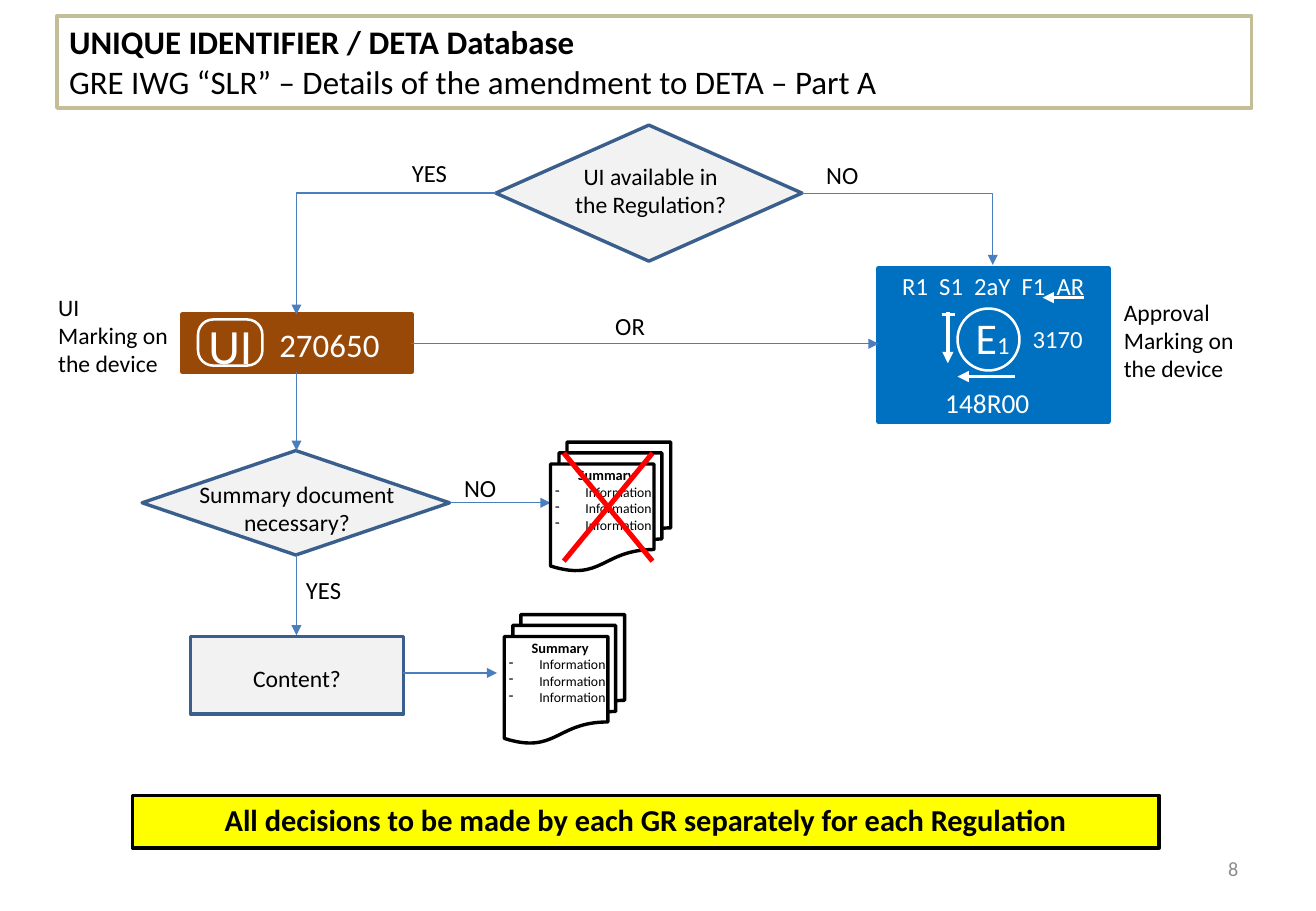
"""Builds the flow chart slide on unique identifiers in the DETA database."""
from pptx import Presentation
from pptx import util as u
from pptx.dml.color import RGBColor
from pptx.enum import shapes, text
from pptx.oxml.ns import qn
from lxml import etree

SCALE = 9144
FONT = "Calibri"
BLACK, WHITE, RED = "000000", "FFFFFF", "FF0000"
BLUE, BROWN, GREY, NAVY, ARROW = "0070C0", "984807", "F2F2F2", "3A5F8C", "4B7EBC"
MS, CT = shapes.MSO_SHAPE, shapes.MSO_CONNECTOR
LEFT, CENTER, RIGHT = text.PP_ALIGN.LEFT, text.PP_ALIGN.CENTER, text.PP_ALIGN.RIGHT

TITLE = ((47, 13, 983, 76), "UNIQUE IDENTIFIER / DETA Database",
         "GRE IWG “SLR” – Details of the amendment to DETA – Part A")
BANNER = ((109, 655, 845, 43),
          "All decisions to be made by each GR separately for each Regulation")
NODES = [
    (MS.FLOWCHART_DECISION, (117, 371, 253, 86)),
    (MS.FLOWCHART_DECISION, (408, 103, 252, 112)),
    (MS.RECTANGLE, (157, 524, 175, 64)),
]
LABELS = [
    ("YES", (329, 125, 59, 35), 14.6, LEFT),
    ("NO", (670, 127, 59, 35), 14.6, LEFT),
    ("YES", (242, 468, 57, 35), 14.6, LEFT),
    ("NO", (372, 384, 59, 35), 14.6, LEFT),
    ("OR", (489, 251, 59, 35), 14.6, CENTER),
    ("UI\vMarking on the device", (38, 236, 111, 81), 14, LEFT),
    ("Approval Marking on the device", (915, 240, 122, 81), 14, LEFT),
    ("UI available in the Regulation?", (461, 128, 149, 57), 14, CENTER),
    ("Summary document necessary?", (141, 390, 207, 57), 14, CENTER),
    ("Content?", (141, 542, 207, 34), 14, CENTER),
]
ELBOWS = [(660, 159, 817, 218), (408, 159, 244, 259)]
FLOWS = [(244, 457, 244, 523), (370, 414, 453, 414), (338, 283, 723, 283),
         (332, 554, 409, 554), (244, 306, 244, 371)]
APPROVAL_TEXTS = [
    ([("R1  S1  2aY  F1  AR", 14.6)], (723, 218, 189, 35), CENTER, {}),
    ([("E", 26), ("1", 14.6)], (793, 251, 51, 54), LEFT, {}),
    ([("148R00", 16.2)], (767, 306, 91, 41), CENTER, {"line_spacing": u.Pt(24.4)}),
    ([("3170", 14.6)], (840, 262, 62, 35), LEFT, {}),
]
APPROVAL_ARROWS = [(780, 257, 780, 299), (892, 245, 858, 245), (835, 310, 788, 310)]
APPROVAL_BAR = (775, 259, 786, 259)
UI_TEXTS = [("UI", 29.2, (157, 255, 65, 59), CENTER),
            ("270650", 19.5, (220, 262, 118, 43), LEFT)]
DOCUMENTS = [(415, 506), (453, 364)]
DOCUMENT_ITEMS = ["Information"] * 3
CROSS = [(464, 462, 537, 373), (464, 373, 537, 462)]


def px(values):
    return [u.Emu(v * SCALE) for v in values]


def rgb(value):
    return RGBColor.from_string(value)


def style(obj, **values):
    for name, value in values.items():
        setattr(obj, name, value)


def shape(parent, kind, box, fill, line, width):
    sp = parent.shapes.add_shape(kind, *px(box))
    sp.shadow.inherit = False
    if fill:
        sp.fill.solid()
        sp.fill.fore_color.rgb = rgb(fill)
    else:
        sp.fill.background()
    sp.line.color.rgb = rgb(line)
    sp.line.width = u.Pt(width)
    return sp


def connect(parent, ends, color, width, arrow=True, elbow=False):
    cn = parent.shapes.add_connector(CT.ELBOW if elbow else CT.STRAIGHT, *px(ends))
    cn.line.color.rgb = rgb(color)
    cn.line.width = u.Pt(width)
    pr = cn._element.spPr
    if elbow:
        pr.find(qn("a:prstGeom")).set("prst", "bentConnector2")
    if arrow:
        etree.SubElement(pr.find(qn("a:ln")), qn("a:tailEnd"), type="triangle")
    etree.SubElement(pr, qn("a:effectLst"))


def write(p, runs, color=BLACK, bold=False, align=LEFT, **values):
    style(p, alignment=align, **values)
    for words, size in runs:
        for i, part in enumerate(words.split("\v")):
            if i:
                p.add_line_break()
            r = p.add_run()
            r.text = part
            style(r.font, name=FONT, size=u.Pt(size), bold=bold)
            r.font.color.rgb = rgb(color)


def frame(sp, wrap=True, anchor=text.MSO_ANCHOR.TOP):
    tf = sp.text_frame
    style(tf, word_wrap=wrap, vertical_anchor=anchor)
    return tf


def label(parent, runs, box, wrap=True, anchor=text.MSO_ANCHOR.TOP, **values):
    tf = frame(parent.shapes.add_textbox(*px(box)), wrap, anchor)
    write(tf.paragraphs[0], runs, **values)
    return tf


def approval_mark(s):
    g = s.shapes.add_group_shape()
    shape(g, MS.RECTANGLE, (723, 221, 189, 126), BLUE, BLUE, 3)
    shape(g, MS.OVAL, (788, 254, 51, 51), None, WHITE, 1.5)
    for runs, box, align, values in APPROVAL_TEXTS:
        label(g, runs, box, wrap=runs[0][0] != "3170", color=WHITE, align=align, **values)
    for ends in APPROVAL_ARROWS:
        connect(g, ends, WHITE, 2.25)
    connect(g, APPROVAL_BAR, WHITE, 2.25, arrow=False)


def ui_mark(s):
    g = s.shapes.add_group_shape()
    shape(g, MS.RECTANGLE, (150, 259, 189, 47), BROWN, BROWN, 3)
    sp = shape(g, MS.ROUNDED_RECTANGLE, (163, 263, 53, 38), BROWN, WHITE, 1.5)
    sp.adjustments[0] = 0.33
    for words, size, box, align in UI_TEXTS:
        label(g, [(words, size)], box, color=WHITE, align=align)


def document(s, x, y):
    g = s.shapes.add_group_shape()
    shape(g, MS.FLOWCHART_MULTIDOCUMENT, (x, y, 99, 106), WHITE, BLACK, 2)
    tf = label(g, [("Summary", 8.5)], (x - 6, y + 15, 104, 65), bold=True, align=CENTER)
    for item in DOCUMENT_ITEMS:
        p = tf.add_paragraph()
        pr = p._p.get_or_add_pPr()
        indent = 25 * SCALE
        pr.set("marL", str(indent))
        pr.set("indent", str(-indent))
        etree.SubElement(pr, qn("a:buChar"), char="-")
        write(p, [(item, 8.1)])


def main():
    prs = Presentation()
    prs.slide_width, prs.slide_height = px((1083, 750))
    s = prs.slides.add_slide(prs.slide_layouts[6])

    box, heading, subtitle = TITLE
    tf = frame(shape(s, MS.RECTANGLE, box, None, "C4BD97", 2.25))
    write(tf.paragraphs[0], [(heading, 19.5)], bold=True)
    write(tf.add_paragraph(), [(subtitle, 19.5)])

    box, words = BANNER
    tf = frame(shape(s, MS.RECTANGLE, box, "FFFF00", BLACK, 2.25))
    write(tf.paragraphs[0], [(words, 18)], bold=True, align=CENTER)
    label(s, [("8", 12)], (776, 695, 253, 40), anchor=text.MSO_ANCHOR.MIDDLE,
          color="8C8C8C", align=RIGHT)

    for kind, box in NODES:
        shape(s, kind, box, GREY, NAVY, 2)
    approval_mark(s)
    ui_mark(s)
    for ends in ELBOWS:
        connect(s, ends, ARROW, 0.75, elbow=True)
    for ends in FLOWS:
        connect(s, ends, ARROW, 0.75)
    for words, box, size, align in LABELS:
        label(s, [(words, size)], box, align=align)
    for x, y in DOCUMENTS:
        document(s, x, y)
    for ends in CROSS:
        connect(s, ends, RED, 3, arrow=False)
    prs.save("out.pptx")


if __name__ == "__main__":
    main()
